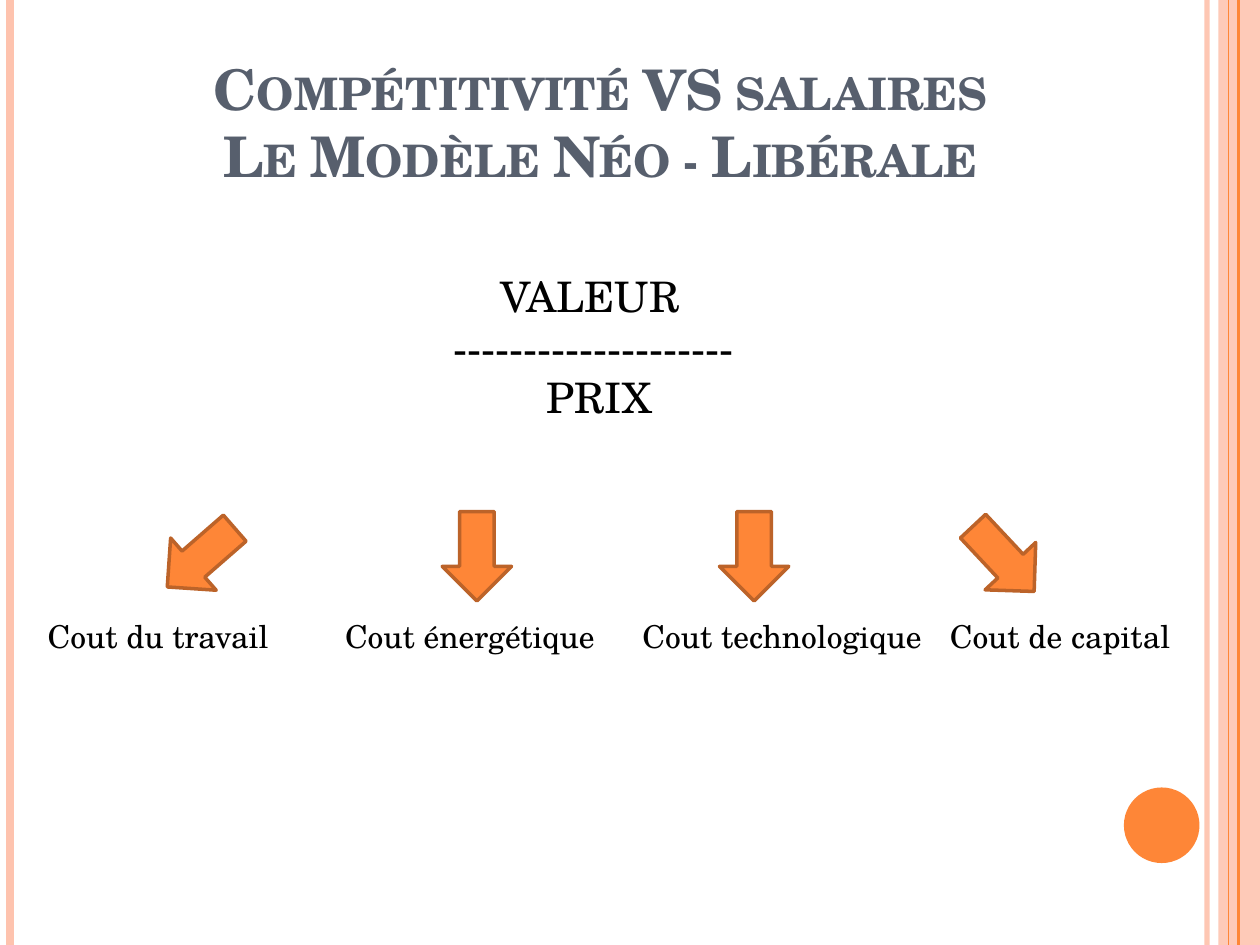
from pptx import Presentation
from pptx.dml.color import RGBColor
from pptx.enum.shapes import MSO_CONNECTOR as CONNECTOR, MSO_SHAPE as SHAPE
from pptx.enum.text import MSO_ANCHOR as ANCHOR, MSO_AUTO_SIZE as AUTO_SIZE, PP_ALIGN as ALIGN
from pptx.oxml.ns import qn
from pptx.util import Inches, Pt
from lxml import etree

THEME = {
    "font": "TeX Gyre Schola",
    "orange": RGBColor.from_string("FE8637"),
    "outline": RGBColor.from_string("BC6329"),
    "peach": RGBColor.from_string("FEC3AE"),
    "slate": RGBColor.from_string("575F6D"),
    "black": RGBColor.from_string("000000"),
    "title_size": Pt(32),
    "formula_size": Pt(24),
    "label_size": Pt(18),
}


def style_text(paragraph, **formats):
    for run in paragraph.runs:
        run.font.color.rgb = formats["color"]
        for name in ("name", "size", "bold"):
            setattr(run.font, name, formats.get(name, THEME["font"] if name == "name" else None))


def set_alpha(element, percent):
    color = next(element.iter(qn("a:srgbClr")))
    etree.SubElement(color, qn("a:alpha"), val=str(percent * 1000))


presentation = Presentation()
presentation.slide_width, presentation.slide_height = Inches(10), Inches(7.5)
slide = presentation.slides.add_slide(presentation.slide_layouts[5])
shapes = slide.shapes

# Side band, behind the thin vertical rules
band = shapes.add_shape(SHAPE.RECTANGLE, Inches(9.67), 0, Inches(0.33), Inches(7.5))
band.shadow.inherit = False
band.fill.solid()
band.fill.fore_color.rgb = THEME["peach"]
band.line.fill.background()
set_alpha(band.fill._xPr, 87)

# Vertical rules: x, colour, width, opacity
for x, color, width, opacity in (
    (9.58, "peach", 3, 93),
    (0.08, "peach", 4.5, 100),
    (9.83, "orange", 1.5, 100),
    (9.75, "orange", 0.75, 100),
):
    rule = shapes.add_connector(CONNECTOR.STRAIGHT, Inches(x), 0, Inches(x), Inches(7.5))
    rule.line.color.rgb = THEME[color]
    rule.line.width = Pt(width)
    if opacity < 100:
        set_alpha(rule.line._ln, opacity)
    etree.SubElement(rule._element.spPr, qn("a:effectLst"))

# Corner disc
disc = shapes.add_shape(SHAPE.OVAL, Inches(8.92), Inches(6.25), Inches(0.6), Inches(0.6))
disc.shadow.inherit = False
disc.fill.solid()
disc.fill.fore_color.rgb = THEME["orange"]
disc.line.fill.background()

# Title
title = shapes.title
title.left, title.top, title.width, title.height = map(Inches, (0.2, 0.84, 9.13, 0.71))
title_frame = title.text_frame
title_frame.auto_size = AUTO_SIZE.NONE
title_frame.vertical_anchor = ANCHOR.BOTTOM
heading = title_frame.paragraphs[0]
heading.text = "Compétitivité VS salaires\vLe Modèle Néo - Libérale"
heading.alignment = ALIGN.CENTER
style_text(heading, size=THEME["title_size"], color=THEME["slate"], bold=True)
for run in heading.runs:
    run.font._element.set("cap", "small")

# Value over price, each line indented towards the middle of the bar
formula = shapes.add_textbox(Inches(3.5), Inches(2.1), Inches(2.68), Inches(1.31))
formula_frame = formula.text_frame
formula_frame.word_wrap = True
for index, (text, indent) in enumerate((("VALEUR", 0.37), ("-" * 20, 0), ("PRIX", 0.74))):
    paragraph = formula_frame.paragraphs[0] if index == 0 else formula_frame.add_paragraph()
    paragraph.text = text
    paragraph._p.get_or_add_pPr().set("marL", str(Inches(indent)))
    style_text(paragraph, size=THEME["formula_size"], color=THEME["black"])

# Cost factors: label, label left, label width, arrow left, arrow top, arrow rotation
for text, left, width, arrow_left, arrow_top, rotation in (
    ("Cout du travail", 0.28, 1.97, 1.24, 4.15, 138.9),
    ("Cout énergétique", 2.64, 2.36, 3.43, 4.14, 90),
    ("Cout technologique", 5, 2.44, 5.63, 4.14, 90),
    ("Cout de capital", 7.44, 1.97, 7.61, 4.16, 46.9),
):
    arrow = shapes.add_shape(
        SHAPE.RIGHT_ARROW, Inches(arrow_left), Inches(arrow_top), Inches(0.71), Inches(0.55)
    )
    arrow.rotation = rotation
    arrow.shadow.inherit = False
    arrow.fill.solid()
    arrow.fill.fore_color.rgb = THEME["orange"]
    arrow.line.color.rgb = THEME["outline"]
    arrow.line.width = Pt(2)

    label = shapes.add_textbox(Inches(left), Inches(4.85), Inches(width), Inches(0.4))
    label.text_frame.word_wrap = False
    paragraph = label.text_frame.paragraphs[0]
    paragraph.text = text
    style_text(paragraph, size=THEME["label_size"], color=THEME["black"])

presentation.save("out.pptx")
